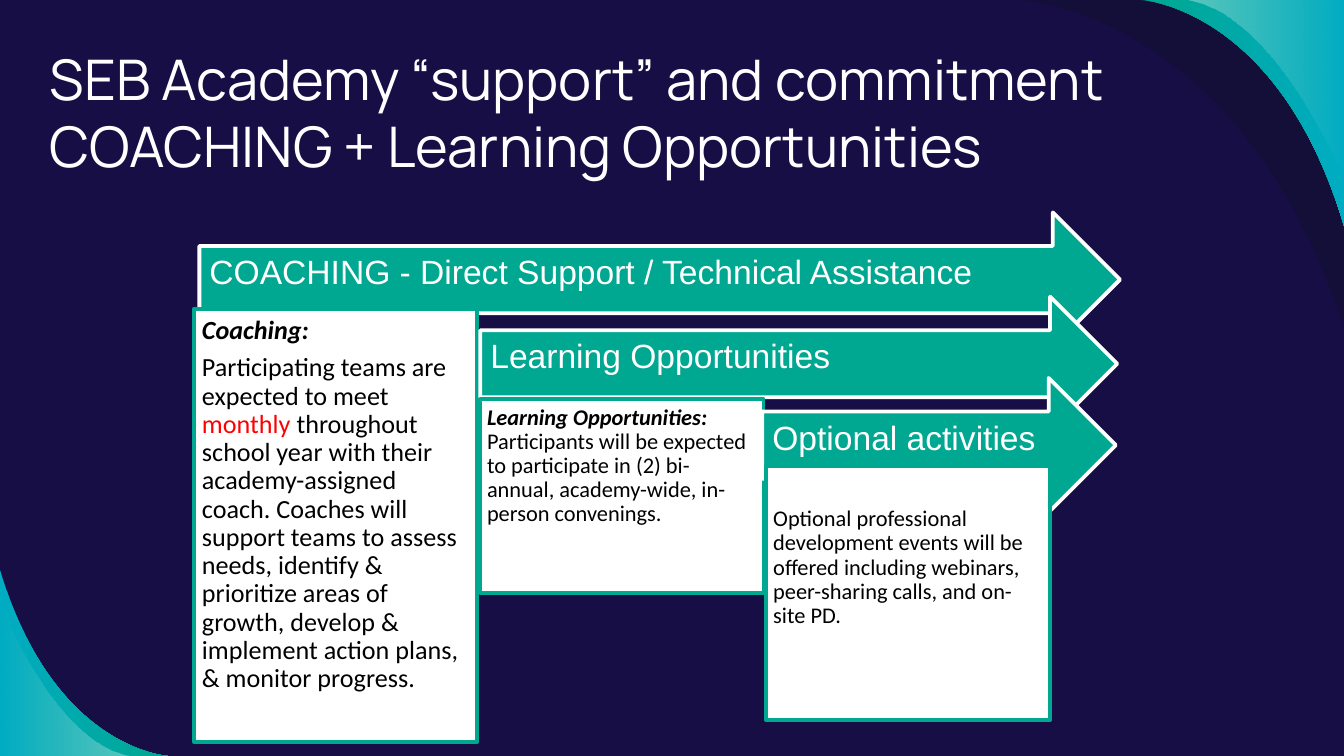
from lxml import etree
from pptx import Presentation
from pptx.dml.color import RGBColor
from pptx.enum import shapes, text
from pptx.oxml.ns import qn
from pptx.util import Pt

NAVY = RGBColor(0x16, 0x0E, 0x44)
SHADE = RGBColor(0x12, 0x10, 0x2F)
BLUE = RGBColor(0x00, 0xAC, 0xC2)
TEAL = RGBColor(0x00, 0xA7, 0x91)
WHITE = RGBColor(0xFF, 0xFF, 0xFF)
BLACK = RGBColor(0x00, 0x00, 0x00)
RED = RGBColor(0xFF, 0x00, 0x00)

# Unit curves for a bottom-left corner: four Bezier points each
OUTER = [(1, 1), (1, 1), (0.32, 0.97), (0, 0)]
INNER = [(0, 0), (0, 0), (0.42, 0.95), (1, 1)]

BODY = {"name": "Calibri", "size": Pt(12), "color": BLACK}
LARGE = {**BODY, "size": Pt(14)}
LABEL = {"name": "Arial", "size": Pt(18), "color": WHITE}
HEADING = {"bold": True, "italic": True}

# Each stage: arrow box, label, card box, card insets, card paragraphs
STAGES = [
    ((106.8, 113.8, 493.2, 72), "COACHING - Direct Support / Technical Assistance",
     (103.8, 165.6, 151.9, 231.8), (4.4, 4.1, 4.4, 4.4),
     [[("Coaching:", {**LARGE, **HEADING})],
      [("Participating teams are expected to meet ", LARGE),
       ("monthly", {**LARGE, "color": RED}),
       (" throughout school year with their academy-assigned coach. Coaches will "
        "support teams to assess needs, identify & prioritize areas of growth, "
        "develop & implement action plans, & monitor progress.", LARGE)]]),
    ((257.3, 158.9, 341.3, 72), "Learning Opportunities",
     (257.2, 213.8, 151.9, 103.9), (3.7, 3.6, 3.7, 3.7),
     [[("Learning Opportunities: ", {**BODY, **HEADING}),
       ("Participants will be expected to participate in (2) bi-annual, "
        "academy-wide, in-person convenings.", BODY)]]),
    ((408.4, 202.5, 189.4, 72), "Optional activities",
     (410.5, 249.8, 151.9, 136.1), (3.7, 22, 3.7, 3.7),
     [[("Optional professional development events will be offered including "
        "webinars, peer-sharing calls, and on-site PD.", BODY)]]),
]


def set_format(span, values):
    for key, value in values.items():
        if key == "color":
            span.font.color.rgb = value
        else:
            setattr(span.font, key, value)


def set_frame(frame, insets, anchor):
    sides = ("left", "top", "right", "bottom")
    values = {f"margin_{side}": Pt(inset) for side, inset in zip(sides, insets)}
    values |= {"word_wrap": True, "auto_size": text.MSO_AUTO_SIZE.NONE,
               "vertical_anchor": anchor}
    for key, value in values.items():
        setattr(frame, key, value)


def bend(swoosh):
    """Join the first three line segments into one Bezier curve."""
    first, second, third = list(swoosh._element.spPr.iter(qn("a:lnTo")))[:3]
    first.tag = qn("a:cubicBezTo")
    for segment in (second, third):
        first.append(segment[0])
        segment.getparent().remove(segment)


def add_swoosh(page, box, curve, stops, turned=False):
    """Fill the corner below a curve; stops are (colour, opacity in percent)."""
    left, top, width, height = box
    outline = curve + [(0, 1)]
    if turned:
        outline = [(1 - x, 1 - y) for x, y in outline]
        stops = stops[::-1]
    places = [(Pt(left + x * width), Pt(top + y * height)) for x, y in outline]
    builder = page.shapes.build_freeform(*places[0])
    builder.add_line_segments(places[1:], close=True)
    swoosh = builder.convert_to_shape()
    bend(swoosh)
    swoosh.shadow.inherit = False
    swoosh.line.fill.background()
    if len(stops) == 1:
        swoosh.fill.solid()
        swoosh.fill.fore_color.rgb = stops[0][0]
    else:
        swoosh.fill.gradient()
        swoosh.fill.gradient_angle = 0
        for stop, (color, _) in zip(swoosh.fill.gradient_stops, stops):
            stop.color.rgb = color
    colors = swoosh._element.spPr.iter(qn("a:srgbClr"))
    for element, (_, opacity) in zip(list(colors), stops):
        if opacity < 100:
            etree.SubElement(element, qn("a:alpha"), val=str(opacity * 1000))


def add_corners(page):
    gradient = [(BLUE, 100), (TEAL, 100)]
    sheen = [(WHITE, 0), (WHITE, 36)]
    # Bottom left
    add_swoosh(page, (0, 305.3, 90, 99.7), OUTER, gradient)
    add_swoosh(page, (0, 324, 71.3, 81), INNER, sheen)
    # Top right
    add_swoosh(page, (546.5, 0, 173.5, 175.7), OUTER, [(SHADE, 54)], turned=True)
    add_swoosh(page, (611.3, 0, 108.7, 121), OUTER, gradient, turned=True)
    add_swoosh(page, (633.6, 0, 86.4, 97.2), INNER, sheen, turned=True)


def add_title(page, box, words):
    title = page.shapes.title
    title.left, title.top, title.width, title.height = map(Pt, box)
    set_frame(title.text_frame, (7.2,) * 4, text.MSO_ANCHOR.TOP)
    para = title.text_frame.paragraphs[0]
    para.alignment = text.PP_ALIGN.LEFT
    span = para.add_run()
    span.text = words
    set_format(span, {"name": "Manrope", "size": Pt(30), "color": WHITE})


def add_panel(page, kind, box, fill, line, insets, anchor, paragraphs):
    panel = page.shapes.add_shape(kind, *map(Pt, box))
    panel.shadow.inherit = False
    panel.fill.solid()
    panel.fill.fore_color.rgb = fill
    panel.line.color.rgb = line
    panel.line.width = Pt(2)
    frame = panel.text_frame
    set_frame(frame, insets, anchor)
    for index, spans in enumerate(paragraphs):
        para = frame.add_paragraph() if index else frame.paragraphs[0]
        para.alignment = text.PP_ALIGN.LEFT
        para.line_spacing = 0.9
        para.space_after = Pt(4.9)
        for words, values in spans:
            span = para.add_run()
            span.text = words
            set_format(span, values)


def add_stage(page, arrow_box, label, card_box, insets, paragraphs):
    add_panel(page, shapes.MSO_SHAPE.RIGHT_ARROW, arrow_box, TEAL, WHITE,
              (5.4, 5, 20, 11.4), text.MSO_ANCHOR.MIDDLE, [[(label, LABEL)]])
    add_panel(page, shapes.MSO_SHAPE.RECTANGLE, card_box, WHITE, TEAL,
              insets, text.MSO_ANCHOR.TOP, paragraphs)


def main():
    deck = Presentation()
    deck.slide_width, deck.slide_height = Pt(720), Pt(405)
    page = deck.slides.add_slide(deck.slide_layouts[5])
    page.background.fill.solid()
    page.background.fill.fore_color.rgb = NAVY
    add_corners(page)
    add_title(page, (19.4, 16.6, 665.3, 49.7),
              "SEB Academy “support” and commitment COACHING + Learning Opportunities")
    for stage in STAGES:
        add_stage(page, *stage)
    deck.save("out.pptx")


if __name__ == "__main__":
    main()
